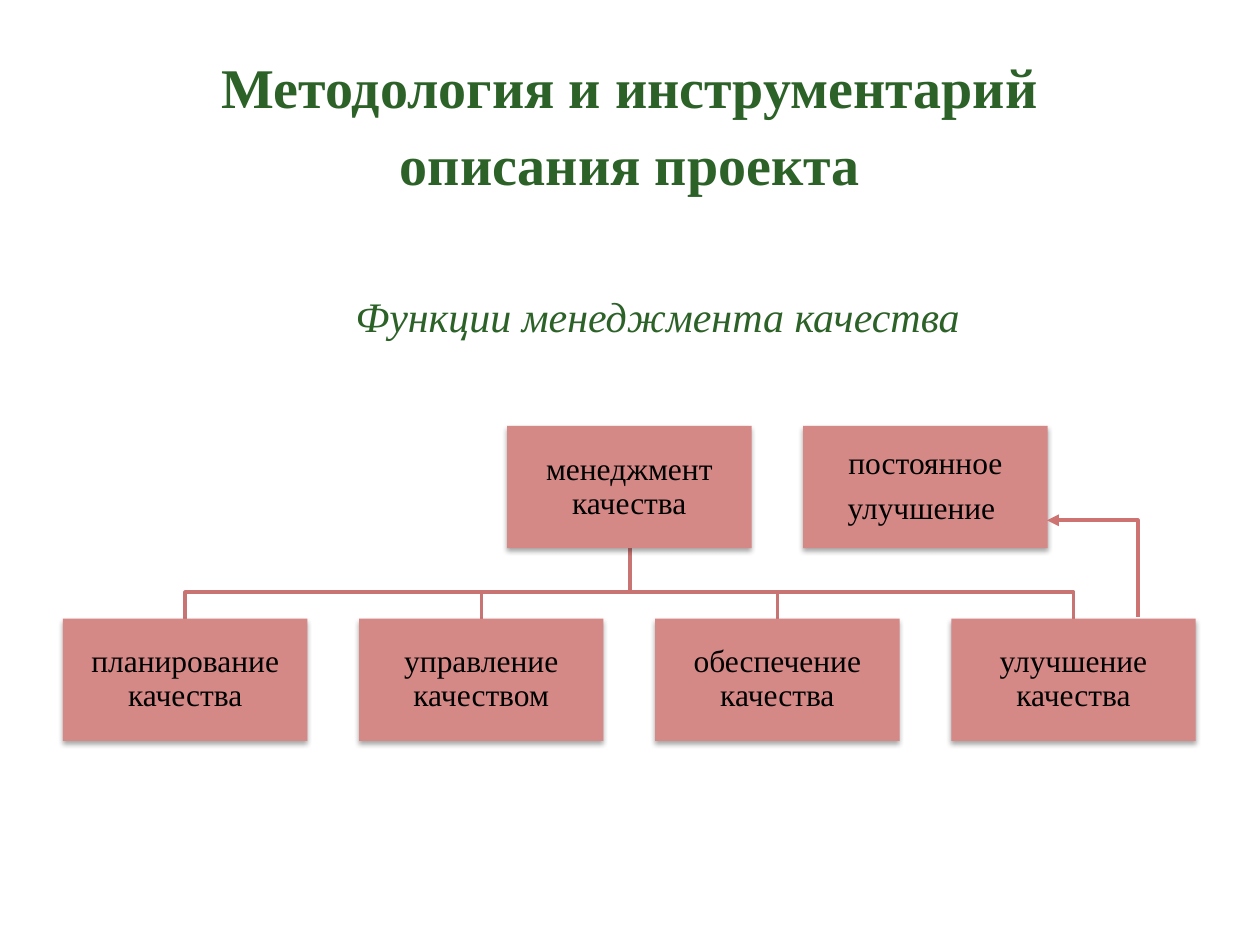
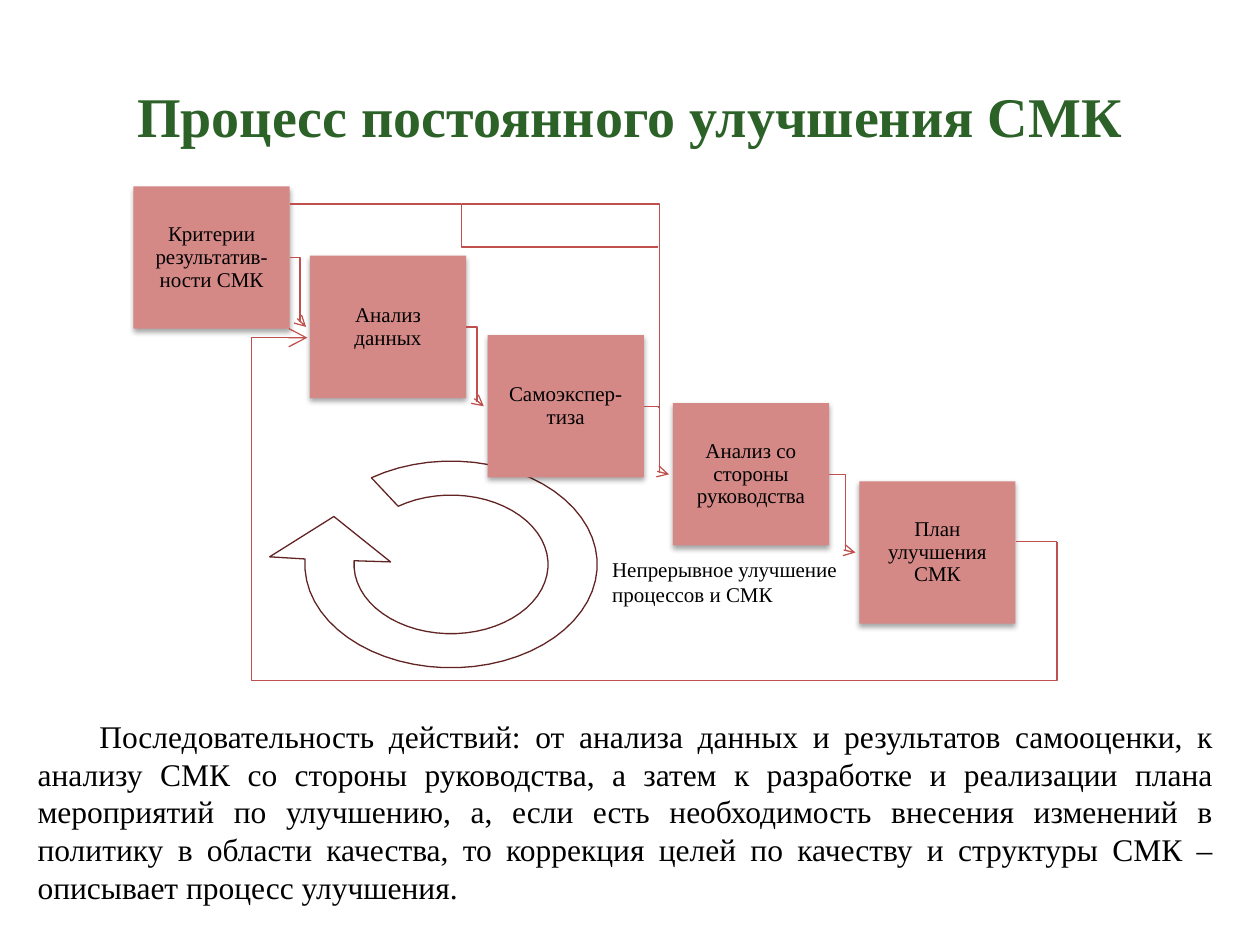
from dataclasses import dataclass
from math import cos, radians, sin

from lxml import etree
from pptx import Presentation
from pptx.dml.color import RGBColor
from pptx.enum.shapes import MSO_CONNECTOR as Connector, MSO_SHAPE as Shape
from pptx.enum.text import MSO_ANCHOR as Anchor, MSO_AUTO_SIZE as AutoSize, PP_ALIGN as Align
from pptx.oxml.ns import qn
from pptx.util import Inches, Pt


@dataclass(frozen=True)
class Theme:
    font: str = "Times New Roman"
    heading: str = "2C6228"
    text: str = "000000"
    card: str = "D58987"
    tree: str = "C77472"
    feedback: str = "CD7371"
    flow: str = "C0504D"
    cycle_line: str = "622423"
    cycle_fill: str = "FFFFFF"
    title_size: float = 32
    subtitle_size: float = 24
    body_size: float = 18
    small_size: float = 12


theme = Theme()


def write(frame, lines, size, color, align, bold=False, italic=False, spacing=1.0, after=0):
    frame.word_wrap = True
    for index, line in enumerate(lines):
        paragraph = frame.paragraphs[0] if index == 0 else frame.add_paragraph()
        paragraph.alignment = align
        paragraph.line_spacing = spacing
        paragraph.space_after = Pt(after)
        run = paragraph.add_run()
        run.text = line
        run.font.name = theme.font
        run.font.size = Pt(size)
        run.font.bold = bold
        run.font.italic = italic
        run.font.color.rgb = RGBColor.from_string(color)


def connect(slide, start, end, color, width, bend=None, head=None, tail=None, arrow_size="med"):
    """Straight line, or an elbow that turns at the share `bend` of its width."""
    kind = Connector.STRAIGHT if bend is None else Connector.ELBOW
    connector = slide.shapes.add_connector(kind, *map(Inches, (*start, *end)))
    connector.line.color.rgb = RGBColor.from_string(color)
    connector.line.width = Pt(width)
    properties = connector._element.spPr
    if bend is not None:
        guides = properties.find(qn("a:prstGeom")).find(qn("a:avLst"))
        etree.SubElement(guides, qn("a:gd"), name="adj1", fmla=f"val {round(bend * 100000)}")
    outline = properties.find(qn("a:ln"))
    for tag, arrow in (("a:headEnd", head), ("a:tailEnd", tail)):
        if arrow:
            etree.SubElement(outline, qn(tag), type=arrow, w=arrow_size, len=arrow_size)
    etree.SubElement(properties, qn("a:effectLst"))


presentation = Presentation()
presentation.slide_width = Inches(10)
presentation.slide_height = Inches(7.5)

# Slides and titles
slides = []
for title_lines, top, height in (
    (("Методология и инструментарий", "описания проекта"), 0.44, 1.02),
    (("Процесс постоянного улучшения СМК",), 0.39, 0.98),
):
    slide = presentation.slides.add_slide(presentation.slide_layouts[5])
    title = slide.shapes.title
    title.left, title.top = Inches(0), Inches(top)
    title.width, title.height = Inches(10), Inches(height)
    title.text_frame.auto_size = AutoSize.NONE
    title.text_frame.vertical_anchor = Anchor.MIDDLE
    write(title.text_frame, title_lines, theme.title_size, theme.heading, Align.CENTER,
          bold=True, spacing=1.14)
    slides.append(slide)
functions_slide, process_slide = slides

# Places of the cards
card_width, card_height = 1.94, 0.97
first_left, column_step = 0.5, 2.35
upper_top, lower_top = 3.38, 4.91
function_cards = [
    (first_left + column * column_step, top, lines)
    for column, top, lines in (
        (1.5, upper_top, ("менеджмент качества",)),
        (0, lower_top, ("планирование качества",)),
        (1, lower_top, ("управление качеством",)),
        (2, lower_top, ("обеспечение качества",)),
        (3, lower_top, ("улучшение качества",)),
        (2.5, upper_top, ("постоянное", "улучшение ")),
    )
]
step_width, step_height = 1.24, 1.13
process_cards = [
    (1.06, 1.48, ("Критерии результатив-ности СМК",)),
    (2.46, 2.03, ("Анализ данных",)),
    (3.87, 2.66, ("Самоэкспер-тиза",)),
    (5.34, 3.2, ("Анализ со стороны руководства",)),
    (6.82, 3.82, ("План улучшения СМК",)),
]

# Outlines behind the cards: tree branches and the circular arrow
trunk_x, bus_y = 5, 4.7
outlines = []
for left, _, _ in reversed(function_cards[1:5]):
    branch_x = left + card_width / 2
    branch = [(trunk_x, upper_top + card_height), (trunk_x, bus_y),
              (branch_x, bus_y), (branch_x, lower_top)]
    outlines.append((functions_slide, branch, False, theme.tree, 2))

center_x, center_y = 3.58, 4.48
arc_angles = range(183, -124, -6)
inner_arc = [(center_x + 0.77 * cos(radians(a)), center_y + 0.55 * sin(radians(a)))
             for a in arc_angles]
outer_arc = [(center_x + 1.16 * cos(radians(a)), center_y + 0.82 * sin(radians(a)))
             for a in reversed(arc_angles)]
arrow_head = [(2.14, 4.42), (2.65, 4.1), (3.1, 4.46)]
outlines.append((process_slide, inner_arc + outer_arc + arrow_head, True, theme.cycle_line, 0.75))

for slide, points, closed, color, width in outlines:
    first, *others = [(Inches(x), Inches(y)) for x, y in points]
    builder = slide.shapes.build_freeform(*first)
    builder.add_line_segments(others, close=closed)
    outline = builder.convert_to_shape()
    outline.shadow.inherit = False
    if closed:
        outline.fill.solid()
        outline.fill.fore_color.rgb = RGBColor.from_string(theme.cycle_fill)
    else:
        outline.fill.background()
    outline.line.color.rgb = RGBColor.from_string(color)
    outline.line.width = Pt(width)

# Cards of both slides
for slide, places, width, height, margin, size in (
    (functions_slide, function_cards, card_width, card_height, 0.01, theme.body_size),
    (process_slide, process_cards, step_width, step_height, 0.09, theme.small_size),
):
    for left, top, lines in places:
        card = slide.shapes.add_shape(Shape.RECTANGLE, *map(Inches, (left, top, width, height)))
        card.fill.solid()
        card.fill.fore_color.rgb = RGBColor.from_string(theme.card)
        card.line.fill.background()
        card.shadow.inherit = False
        effects = card._element.spPr.find(qn("a:effectLst"))
        shadow = etree.SubElement(effects, qn("a:outerShdw"), blurRad=str(Pt(3.1)),
                                  dist=str(Pt(1.8)), dir="5400000", rotWithShape="0")
        shadow_color = etree.SubElement(shadow, qn("a:srgbClr"), val="000000")
        etree.SubElement(shadow_color, qn("a:alpha"), val="35000")
        frame = card.text_frame
        frame.margin_left = frame.margin_right = Inches(margin)
        frame.margin_top = frame.margin_bottom = Inches(margin)
        frame.vertical_anchor = Anchor.MIDDLE
        write(frame, lines, size, theme.text, Align.CENTER, spacing=0.9, after=0.35 * size)

# Feedback from the last function to the upper card
connect(functions_slide, (8.31, 4.13), (9.03, 4.9), theme.feedback, 2.25, bend=1, head="triangle")

# Process steps: from the right side of each card to the next one
for (left, top, _), (next_left, next_top, _) in zip(process_cards, process_cards[1:]):
    connect(process_slide, (left + step_width, top + step_height / 2),
            (next_left - 0.03, next_top + step_height / 2), theme.flow, 0.75,
            bend=0.62, tail="arrow")

# Process feedback loop and the links above the steps
connect(process_slide, (2.09, 2.68), (2.44, 2.68), theme.flow, 0.75,
        tail="arrow", arrow_size="lg")
for start, end, bend in (
    ((2.09, 2.68), (7.98, 5.4), -0.016),
    ((7.98, 5.4), (8.39, 4.3), 1),
    ((8.06, 4.3), (8.39, 4.3), None),
    ((2.26, 1.62), (5.22, 1.96), 0.474),
    ((3.67, 1.62), (5.22, 3.23), 1.01),
):
    # The links that start under a card's edge begin at the edge itself
    visible_start = (max(start[0], 2.3), start[1]) if start[1] < 1.7 else start
    if visible_start != start:
        bend = (start[0] + bend * (end[0] - start[0]) - 2.3) / (end[0] - 2.3)
    connect(process_slide, visible_start, end, theme.flow, 0.75, bend=bend)

# Subtitle, caption and explanation
explanation = (
    "Последовательность действий: от анализа данных и результатов самооценки, к анализу СМК "
    "со стороны руководства, а затем к разработке и реализации плана мероприятий по улучшению, "
    "а, если есть необходимость внесения изменений в политику в области качества, то коррекция "
    "целей по качеству и структуры СМК – описывает процесс улучшения."
)
for slide, place, text, size, color, align, italic, indent in (
    (functions_slide, (1.6, 2.26, 7.24, 0.5), "Функции менеджмента качества",
     theme.subtitle_size, theme.heading, Align.CENTER, True, 0),
    (process_slide, (4.76, 4.37, 2.29, 0.54), "Непрерывное улучшение процессов и СМК",
     theme.small_size, theme.text, Align.LEFT, False, 0),
    (process_slide, (0.2, 5.64, 9.53, 1.62), explanation,
     theme.body_size, theme.text, Align.JUSTIFY, False, 0.49),
):
    frame = slide.shapes.add_textbox(*map(Inches, place)).text_frame
    write(frame, (text,), size, color, align, italic=italic)
    frame.paragraphs[0]._p.get_or_add_pPr().set("indent", str(Inches(indent)))

presentation.save("out.pptx")
